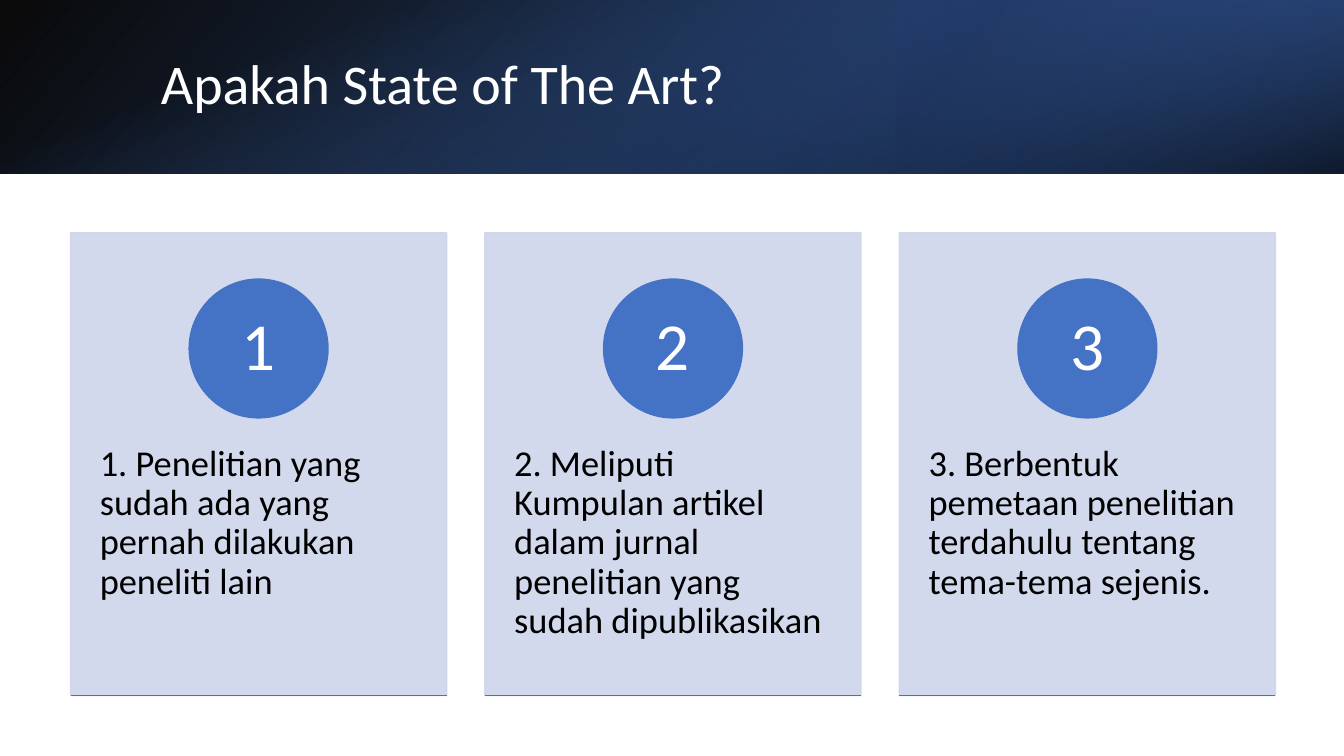
from dataclasses import dataclass
from typing import NamedTuple

from lxml import etree
from pptx import Presentation, util as u
from pptx.dml.color import RGBColor
from pptx.enum import shapes, text
from pptx.oxml.ns import qn


@dataclass(frozen=True)
class Theme:
    font: str = "Calibri"
    title_size: int = 40
    number_size: int = 48
    body_size: int = 26
    white: str = "FFFFFF"
    black: str = "000000"
    accent: str = "4472C4"
    blue: str = "2F5597"
    navy: str = "203864"
    card: str = "CFD5EA"


class Box(NamedTuple):
    """A rectangle in inches."""
    x: float
    y: float
    w: float
    h: float

    def inner(self, x, y, w, h):
        """The box at the given shares of this one."""
        return Box(self.x + x * self.w, self.y + y * self.h, w * self.w, h * self.h)

    def emu(self):
        return [u.Inches(v) for v in self]


THEME = Theme()
SLIDE = Box(0, 0, 13.33, 7.5)
BANNER = Box(0, 0, SLIDE.w, 1.72)
CARDS = Box(0.7, 2.31, 11.95, 4.59)
CARD_GAP = 0.38
TITLE = "Apakah State of The Art?"
POINTS = [
    "1. Penelitian yang sudah ada yang pernah dilakukan peneliti lain",
    "2. Meliputi Kumpulan artikel dalam jurnal penelitian yang sudah dipublikasikan",
    "3. Berbentuk pemetaan penelitian terdahulu tentang tema-tema sejenis.",
]


def rgb(color):
    return RGBColor.from_string(color)


def set_opacity(sp, *percents):
    """Give the shape's colours, in their order, these opacities."""
    colors = sp._element.spPr.iter(qn("a:srgbClr"))
    for color, percent in zip(list(colors), percents):
        etree.SubElement(color, qn("a:alpha"), val=str(percent * 1000))


def add_solid(slide, kind, box, color):
    sp = slide.shapes.add_shape(kind, *box.emu())
    sp.shadow.inherit = False
    sp.fill.solid()
    sp.fill.fore_color.rgb = rgb(color)
    sp.line.color.rgb = rgb(color)
    sp.line.width = u.Pt(1)
    return sp


def add_gradient(slide, box, stops, angle, rotation=0, flip=False):
    """Stops are (share, colour, opacity); the angle runs clockwise."""
    sp = slide.shapes.add_shape(shapes.MSO_SHAPE.RECTANGLE, *box.emu())
    sp.shadow.inherit = False
    sp.line.fill.background()
    sp.rotation = rotation
    if flip:
        sp._element.spPr.xfrm.set("flipH", "1")
    sp.fill.gradient()
    sp.fill.gradient_angle = 360 - angle
    for stop, (share, color, _) in zip(sp.fill.gradient_stops, stops):
        stop.position = share
        stop.color.rgb = rgb(color)
    set_opacity(sp, *(opacity for _, _, opacity in stops))


def write(sp, words, size, color, align=text.PP_ALIGN.LEFT,
          anchor=text.MSO_ANCHOR.MIDDLE, insets=(0.1, 0.05)):
    tf = sp.text_frame
    tf.word_wrap = True
    tf.vertical_anchor = anchor
    tf.margin_left = tf.margin_right = u.Inches(insets[0])
    tf.margin_top = tf.margin_bottom = u.Inches(insets[1])
    p = tf.paragraphs[0]
    p.alignment = align
    p.line_spacing = 0.9
    r = p.add_run()
    r.text = words
    r.font.name = THEME.font
    r.font.size = u.Pt(size)
    r.font.color.rgb = rgb(color)


def add_banner(slide, box, title):
    add_gradient(slide, box, [(0, THEME.black, 96), (1, THEME.blue, 100)],
                 140, flip=True)
    add_gradient(slide, box.inner(2 / 3, 0, 1 / 3, 1),
                 [(0.19, THEME.navy, 68), (1, THEME.accent, 79)],
                 320, rotation=180, flip=True)
    upright = Box(box.x + (box.w - box.h) / 2, box.y + (box.h - box.w) / 2,
                  box.h, box.w)
    add_gradient(slide, upright,
                 [(0.23, THEME.accent, 0), (0.99, THEME.black, 74)],
                 340, rotation=90)
    tb = slide.shapes.add_textbox(*box.inner(0.11, 0.22, 0.82, 0.56).emu())
    write(tb, title, THEME.title_size, THEME.white, insets=(0.13, 0.05))


def add_card(slide, box, number, words):
    panel = add_solid(slide, shapes.MSO_SHAPE.RECTANGLE, box, THEME.card)
    set_opacity(panel, 90, 90)

    tb = slide.shapes.add_textbox(*box.inner(0, 0.38, 1, 0.6).emu())
    write(tb, words, THEME.body_size, THEME.black,
          anchor=text.MSO_ANCHOR.TOP, insets=(0.29, 0.36))

    size = 0.3 * box.h
    disc = Box(box.x + (box.w - size) / 2, box.y + 0.1 * box.h, size, size)
    sp = add_solid(slide, shapes.MSO_SHAPE.OVAL, disc, THEME.accent)
    write(sp, str(number), THEME.number_size, THEME.white,
          text.PP_ALIGN.CENTER, insets=(0.11, 0.01))

    left, top, width, height = box.emu()
    base = slide.shapes.add_connector(shapes.MSO_CONNECTOR.STRAIGHT, left,
                                      top + height, left + width, top + height)
    base.line.color.rgb = rgb(THEME.accent)
    base.line.width = u.Pt(1)
    etree.SubElement(base._element.spPr, qn("a:effectLst"))


def add_cards(slide, box, points):
    width = (box.w - CARD_GAP * (len(points) - 1)) / len(points)
    for i, words in enumerate(points):
        card = Box(box.x + i * (width + CARD_GAP), box.y, width, box.h)
        add_card(slide, card, i + 1, words)


def main():
    prs = Presentation()
    prs.slide_width, prs.slide_height = u.Inches(SLIDE.w), u.Inches(SLIDE.h)
    slide = prs.slides.add_slide(prs.slide_layouts[6])
    add_banner(slide, BANNER, TITLE)
    add_cards(slide, CARDS, POINTS)
    prs.save("out.pptx")


if __name__ == "__main__":
    main()
